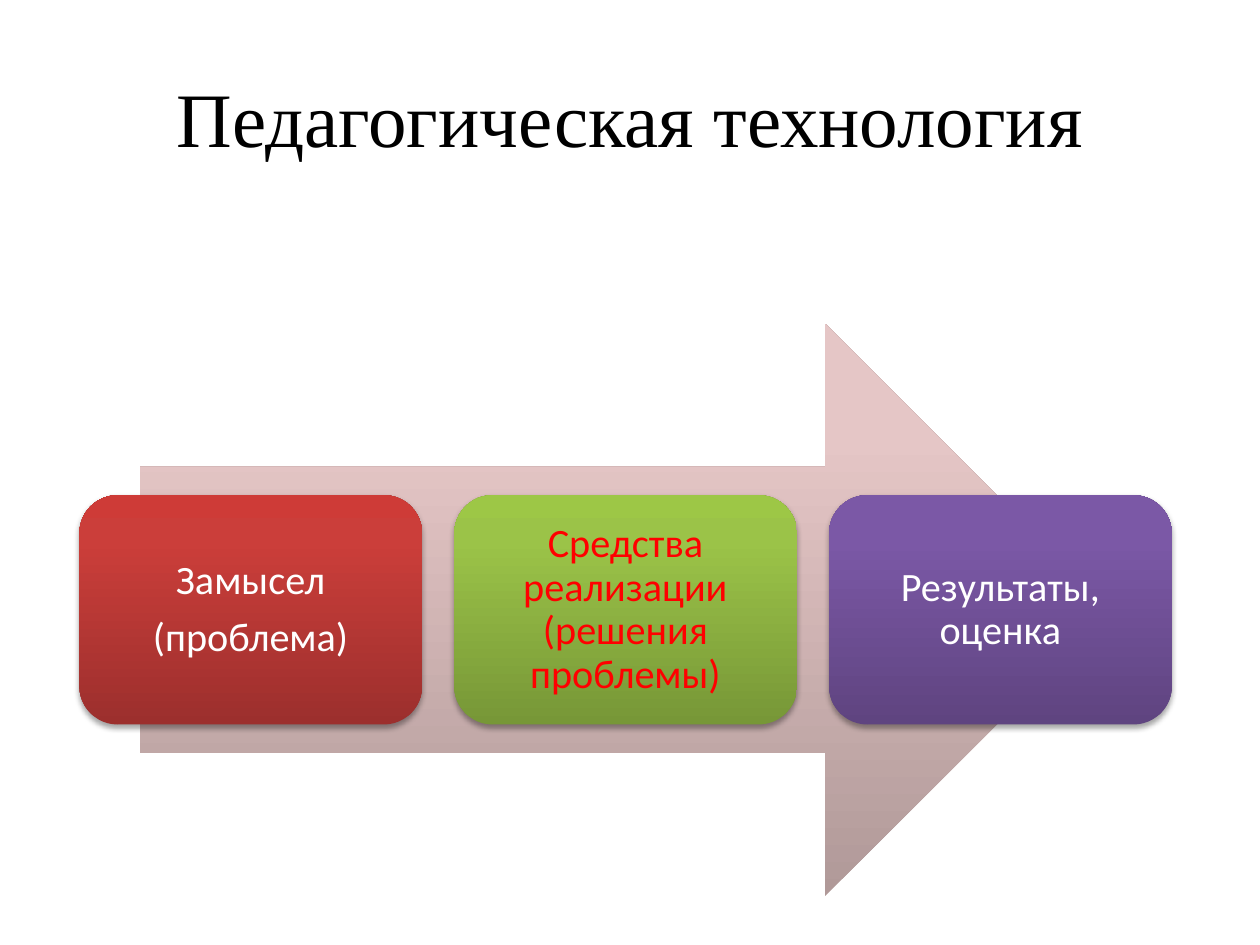
from copy import deepcopy

from lxml import etree
from pptx import Presentation
from pptx.dml.color import RGBColor
from pptx.enum.shapes import MSO_SHAPE
from pptx.enum.text import MSO_ANCHOR, PP_ALIGN
from pptx.oxml.ns import qn
from pptx.util import Inches, Pt

ARROW = MSO_SHAPE.RIGHT_ARROW
ROUND = MSO_SHAPE.ROUNDED_RECTANGLE
MIDDLE = MSO_ANCHOR.MIDDLE
CENTER = PP_ALIGN.CENTER

WIDE, HIGH = 10, 7.5
LEFT, TOP, STEP = 0.63, 3.93, 2.975
BOX_W, BOX_H = 2.72, 1.82
STOPS = (0, 0.8, 1)
COLORS = {
    "black": "000000",
    "white": "FFFFFF",
    "red": "FF0000",
    "pink_fade": ("B09998", "E5C6C6", "E6C7C6"),
    "red_fade": ("9C2F2D", "CB3E3A", "CE3B37"),
    "green_fade": ("779737", "9BC348", "9DC746"),
    "violet_fade": ("5F4480", "7B58A6", "7C57A8"),
}
STAGES = [
    (["Замысел", "(проблема)"], "red_fade", "white"),
    (["Средства реализации (решения проблемы)"], "green_fade", "red"),
    (["Результаты, оценка"], "violet_fade", "white"),
]


def write(shape, lines, size, color, font="Calibri", line=1.0, after=0):
    """Fill a shape with centred paragraphs."""
    frame = shape.text_frame
    frame.word_wrap = True
    frame.vertical_anchor = MIDDLE
    frame.text = "\n".join(lines)
    for para in frame.paragraphs:
        para.alignment = CENTER
        para.line_spacing = line
        para.space_after = Pt(after)
        face = para.runs[0].font
        face.name, face.size = font, Pt(size)
        face.color.rgb = RGBColor.from_string(COLORS[color])


def fade(shape, name):
    """Give a shape a three-stop gradient that runs upwards."""
    fill = shape.fill
    fill.gradient()
    fill.gradient_angle = 90
    stops = shape._element.spPr.find(qn("a:gradFill")).find(qn("a:gsLst"))
    stops.insert(1, deepcopy(stops[0]))
    for stop, pos, tone in zip(fill.gradient_stops, STOPS, COLORS[name]):
        stop.position = pos
        stop.color.rgb = RGBColor.from_string(tone)


def shade(shape):
    """Add a soft shadow below a shape."""
    effects = shape._element.spPr.find(qn("a:effectLst"))
    outer = etree.SubElement(
        effects, qn("a:outerShdw"), blurRad=str(Pt(3.1)), dist=str(Pt(1.8)),
        dir="5400000", rotWithShape="0")
    tint = etree.SubElement(outer, qn("a:srgbClr"), val=COLORS["black"])
    etree.SubElement(tint, qn("a:alpha"), val="35000")


def block(slide, kind, place, tone):
    """Add a preset shape with a gradient and no outline."""
    shape = slide.shapes.add_shape(kind, *map(Inches, place))
    shape.shadow.inherit = False
    shape.line.fill.background()
    fade(shape, tone)
    return shape


def stage(slide, col, lines, tone, color):
    """Add one stage box in its column."""
    place = (LEFT + col * STEP, TOP, BOX_W, BOX_H)
    box = block(slide, ROUND, place, tone)
    shade(box)
    frame = box.text_frame
    frame.margin_left = frame.margin_right = Inches(0.1)
    frame.margin_top = frame.margin_bottom = Inches(0.1)
    write(box, lines, 23, color, line=0.9, after=8)


def head(slide, text):
    """Place and write the slide title."""
    title = slide.shapes.title
    title.left, title.top = Inches(0.5), Inches(0.3)
    title.width, title.height = Inches(9), Inches(1.25)
    write(title, [text], 44, "black", font="Times New Roman")


def main():
    """Build and save the slide."""
    deck = Presentation()
    deck.slide_width, deck.slide_height = Inches(WIDE), Inches(HIGH)
    slide = deck.slides.add_slide(deck.slide_layouts[5])
    head(slide, "Педагогическая технология")
    block(slide, ARROW, (1.11, 2.57, 7.71, 4.54), "pink_fade")
    for col, (lines, tone, color) in enumerate(STAGES):
        stage(slide, col, lines, tone, color)
    deck.save("out.pptx")


if __name__ == "__main__":
    main()
